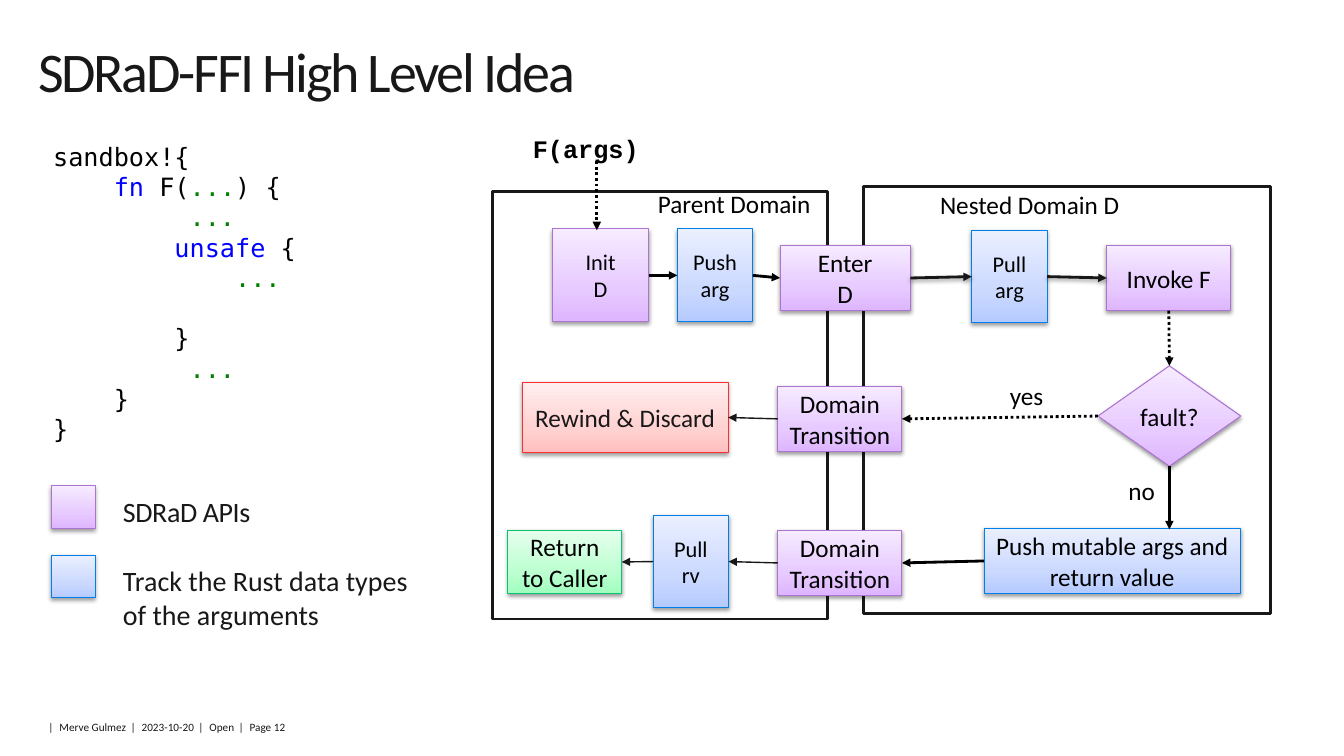
from copy import deepcopy
from dataclasses import dataclass

from lxml.etree import SubElement as Sub
from pptx import Presentation
from pptx.dml.color import RGBColor as Rgb
from pptx.enum.dml import MSO_LINE as Dash
from pptx.enum.shapes import MSO_CONNECTOR as Conn, MSO_SHAPE as Form
from pptx.enum.text import MSO_ANCHOR as Anchor, PP_ALIGN as Align
from pptx.oxml.ns import qn
from pptx.util import Cm, Pt

HEX = {"black": "000000", "ink": "181818", "white": "FFFFFF",
       "key": "0000FF", "dots": "008000", "foot": "1A1816"}
# Per node kind: border, then the gradient from bottom to top
TINT = {
    "api": ("AC73D0", "DEB5FF", "E7CAFF", "F6EBFF"),
    "type": ("007FEB", "B5CAFF", "CBD9FF", "EBF0FF"),
    "bad": ("FE2C2C", "FFBFBF", "FFD2D2", "FFEEEE"),
    "good": ("0AC371", "A1FFBF", "BDFFD1", "E6FFED"),
}
STOPS = (0, 0.35, 1)
TOP, LEFT, BASE, RIGHT = range(4)  # connection sites
Box = tuple[float, float, float, float]


@dataclass
class Node:
    name: str
    text: str
    tint: str
    box: Box
    size: int = 18
    form: Form = Form.RECTANGLE
    color: str = "black"
    wrap: bool = True


@dataclass
class Arrow:
    """Each end is a (node name, site) pair or an (x, y) point."""
    start: tuple
    end: tuple
    width: float = 2
    color: str = "black"
    dots: bool = False
    shade: bool = False


@dataclass
class Label:
    text: str
    box: Box
    size: int = 18
    font: str = "Calibri"
    color: str = "black"
    bold: bool = False
    pad: tuple[float, float] = (0.25, 0.13)
    track: float = 0


BIG, TALL = (3.13, 1.65), (1.9, 2.34)
NODES = [
    Node("invoke", "Invoke F", "api", (27.89, 6.18, *BIG)),
    Node("enter", "Enter\nD", "api", (19.66, 6.18, 3.28, 1.65)),
    Node("fault", "fault?", "api", (27.67, 9.22, 3.6, 2.53), form=Form.DIAMOND, wrap=False),
    Node("exit", "Domain Transition", "api", (19.6, 13.36, *BIG)),
    Node("abort", "Domain Transition", "api", (19.6, 9.73, *BIG)),
    Node("send", "Push mutable args and return value", "type", (24.8, 13.31, 6.46, 1.65)),
    Node("init", "Init\nD", "api", (13.92, 5.77, 2.43, 2.34), 16),
    Node("rewind", "Rewind & Discard", "bad", (13.16, 9.63, 5.19, 1.78),
         color="ink", wrap=False),
    Node("return", "Return to Caller", "good", (12.8, 13.36, 2.87, 1.6)),
    Node("push", "Push\narg", "type", (17.07, 5.77, *TALL), 16),
    Node("pull", "Pull\narg", "type", (24.49, 5.8, *TALL), 16),
    Node("result", "Pull\nrv", "type", (16.46, 12.98, *TALL), 16),
    Node("api key", "", "api", (1.3, 12.24, 1.1, 1.07)),
    Node("type key", "", "type", (1.3, 14, 1.1, 1.07)),
]
ARROWS = [
    Arrow((15.04, 4.06), (15.04, 5.8), dots=True),
    Arrow(("init", RIGHT), ("push", LEFT)),
    Arrow(("push", RIGHT), ("enter", LEFT)),
    Arrow(("enter", RIGHT), ("pull", LEFT), color="ink", shade=True),
    Arrow(("pull", RIGHT), ("invoke", LEFT), color="ink", shade=True),
    Arrow(("invoke", BASE), ("fault", TOP), dots=True),
    Arrow(("fault", LEFT), ("abort", RIGHT), dots=True),
    Arrow(("abort", LEFT), ("rewind", RIGHT), 1, "ink"),
    Arrow(("fault", BASE), (29.47, 13.34)),
    Arrow(("send", LEFT), ("exit", RIGHT)),
    Arrow(("exit", LEFT), ("result", RIGHT), 1, "ink"),
    Arrow(("result", LEFT), ("return", RIGHT), 1, "ink"),
]
LABELS = [
    Label("no", (28.19, 11.84, 1.19, 1.02)),
    Label("yes", (25.2, 9.45, 1.37, 1.02)),
    Label("Parent Domain", (16.33, 4.62, 4.39, 1.02)),
    Label("Nested Domain D", (23.44, 4.65, 5.51, 1.02)),
    Label("F(args)", (13.18, 3.23, 5, 1.02), font="Courier New", bold=True),
    Label("SDRaD APIs", (2.9, 12.37, 4.67, 0.94), 20, color="ink", pad=(0.2, 0.1), track=-0.3),
    Label("Track the Rust data types of the arguments", (2.9, 14.1, 8.28, 0.94), 20,
          color="ink", pad=(0.2, 0.1)),
]
FRAMES = [(21.77, 4.7, 10.26, 10.77), (12.42, 4.83, 8.43, 10.77)]
CODE = [
    [("sandbox!{", "black")],
    [("    ", "black"), ("fn", "key"), (" F(", "black"), ("...", "dots"), (") {", "black")],
    [("         ...", "dots")],
    [("        ", "black"), ("unsafe", "key"), (" {", "black")],
    [("            ...", "dots")],
    [("        }", "black")],
    [("         ...", "dots")],
    [("    }", "black")],
    [("}", "black")],
]
FOOT = ["Merve Gulmez", "2023-10-20", "Open", "Page 12"]


def place(box: Box) -> list:
    return [Cm(v) for v in box]


def write(shape, text, *, size=18, font="Calibri", color="black", bold=False, track=0,
          align=Align.LEFT, anchor=Anchor.TOP, pad=(0.25, 0.13), wrap=True, pitch=None):
    """Fill a shape from a string, or from lines of (text, colour[, tracking]) runs."""
    frame = shape.text_frame
    frame.word_wrap, frame.vertical_anchor = wrap, anchor
    frame.margin_left = frame.margin_right = Cm(pad[0])
    frame.margin_top = frame.margin_bottom = Cm(pad[1])
    lines = [[(t, color)] for t in text.split("\n")] if isinstance(text, str) else text
    for i, line in enumerate(lines):
        para = frame.add_paragraph() if i else frame.paragraphs[0]
        para.alignment = align
        if pitch:
            para.line_spacing = pitch
        for words, hue, *gap in line:
            run = para.add_run()
            run.text = words
            face = run.font
            face.size, face.name, face.bold = Pt(size), font, bold
            face.color.rgb = Rgb.from_string(HEX[hue])
            space = gap[0] if gap else track
            if space:
                run._r.get_or_add_rPr().set("spc", str(round(space * 100)))
    return frame


def shade(list_) -> None:
    """Put a soft drop shadow in an effect list."""
    drop = Sub(list_, qn("a:outerShdw"), blurRad=str(Pt(3.1)), dist=str(Pt(1.6)),
               dir="5400000", rotWithShape="0")
    hue = Sub(drop, qn("a:srgbClr"), val=HEX["black"])
    Sub(hue, qn("a:alpha"), val="38000")


def add_frame(slide, box: Box) -> None:
    rect = slide.shapes.add_shape(Form.RECTANGLE, *place(box))
    rect.shadow.inherit = False
    rect.fill.solid()
    rect.fill.fore_color.rgb = Rgb.from_string(HEX["white"])
    rect.line.color.rgb = Rgb.from_string(HEX["ink"])
    rect.line.width = Pt(2)


def add_node(slide, node: Node):
    shape = slide.shapes.add_shape(node.form, *place(node.box))
    shape.shadow.inherit = False
    props = shape._element.spPr
    shade(props.find(qn("a:effectLst")))
    edge, *hues = TINT[node.tint]
    shape.fill.gradient()
    shape.fill.gradient_angle = 90
    stops = props.find(".//" + qn("a:gsLst"))
    stops.append(deepcopy(stops[0]))
    for stop, at, hue in zip(shape.fill.gradient_stops, STOPS, hues):
        stop.position, stop.color.rgb = at, Rgb.from_string(hue)
    shape.line.color.rgb = Rgb.from_string(edge)
    shape.line.width = Pt(0.75)
    if node.text:
        write(shape, node.text, size=node.size, color=node.color, wrap=node.wrap,
              align=Align.CENTER, anchor=Anchor.MIDDLE)
    return shape


def add_arrow(slide, arrow: Arrow, nodes: dict) -> None:
    ends = (arrow.start, arrow.end)
    spots = [(0, 0) if isinstance(e[0], str) else e for e in ends]
    link = slide.shapes.add_connector(Conn.STRAIGHT, *place(spots[0] + spots[1]))
    for end, glue in zip(ends, (link.begin_connect, link.end_connect)):
        if isinstance(end[0], str):
            glue(nodes[end[0]], end[1])
    link.line.color.rgb = Rgb.from_string(HEX[arrow.color])
    link.line.width = Pt(arrow.width)
    if arrow.dots:
        link.line.dash_style = Dash.ROUND_DOT
    props = link._element.spPr
    Sub(props.find(qn("a:ln")), qn("a:tailEnd"), type="triangle")
    effects = Sub(props, qn("a:effectLst"))
    if arrow.shade:
        shade(effects)


def add_label(slide, tag: Label) -> None:
    write(slide.shapes.add_textbox(*place(tag.box)), tag.text, size=tag.size, font=tag.font,
          color=tag.color, bold=tag.bold, pad=tag.pad, track=tag.track)


def main() -> None:
    deck = Presentation()
    deck.slide_width, deck.slide_height = Cm(33.87), Cm(19.05)
    slide = deck.slides.add_slide(deck.slide_layouts[5])
    title = slide.shapes.title
    title.left, title.top, title.width, title.height = place((0.76, 1.09, 29.24, 3))
    write(title, "SDRaD-FFI High Level Idea", size=40, color="ink", track=-1.6,
          pad=(0.2, 0.1), pitch=0.85)
    for box in FRAMES:
        add_frame(slide, box)
    nodes = {node.name: add_node(slide, node) for node in NODES}
    for arrow in ARROWS:
        add_arrow(slide, arrow, nodes)
    for tag in LABELS:
        add_label(slide, tag)
    step = Pt(21.6)
    code = write(slide.shapes.add_textbox(*place((1.09, 3.43, 9, 7.95))), CODE,
                 font="DejaVu Sans Mono", pitch=step)
    code.paragraphs[5].space_before = step
    foot = [run for i, part in enumerate(FOOT)
            for run in ((" | " if i else "| ", "foot", 1.2), (part, "foot"))]
    write(slide.shapes.add_textbox(*place((1.22, 18.14, 6.35, 0.33))), [foot],
          size=8, pad=(0, 0), wrap=False)
    deck.save("out.pptx")


if __name__ == "__main__":
    main()
